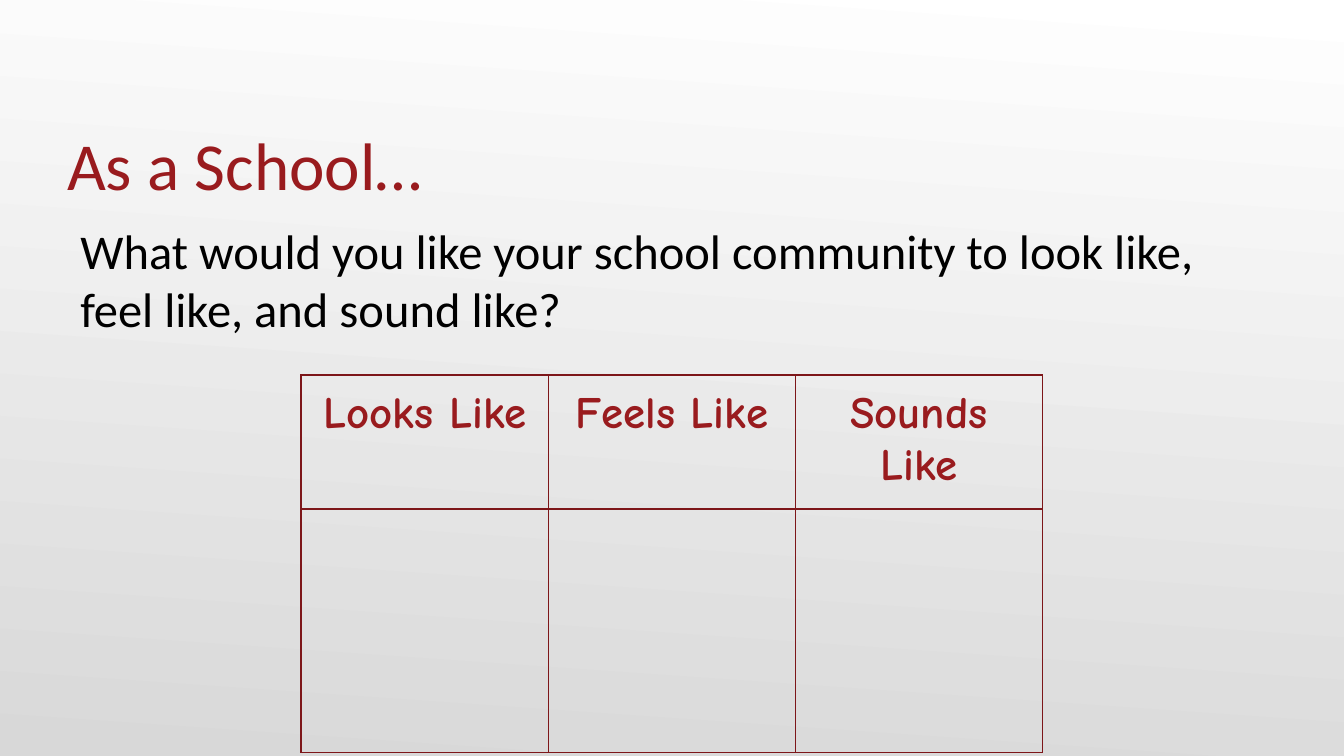
from lxml.etree import SubElement
from pptx import Presentation
from pptx.dml.color import RGBColor
from pptx.enum.text import MSO_ANCHOR, PP_ALIGN
from pptx.oxml.ns import qn
from pptx.util import Cm, Pt

# Content
COLORS = {"red": "991B1E", "border": "7D1619", "text": "000000",
          "top": "FFFFFF", "bottom": "D8D8D8"}
TEXTS = [
    {"text": "As a School…", "box": (1.27, 1.47, 22.86, 2.39),
     "insets": (0, 0.13, 0, 0), "anchor": MSO_ANCHOR.BOTTOM,
     "font": {"name": "Calibri", "size": Pt(36)}, "color": "red"},
    {"text": "What would you like your school community to look like, "
             "feel like, and sound like?",
     "box": (1.27, 4.04, 22.86, 9.14),
     "insets": (0.25, 0.13, 0.25, 0.13), "anchor": MSO_ANCHOR.TOP,
     "font": {"name": "Calibri", "size": Pt(26)}, "color": "text"},
]
HEADINGS = ["Looks Like", "Feels Like", "Sounds Like"]
HEADING_FONT = {"name": "Comic Neue", "size": Pt(24), "bold": True}
TABLE_LEFT, TABLE_TOP = 5.69, 7.09
COLUMN_WIDTH = 4.67
ROW_HEIGHTS = [1.68, 4.6]
CELL_MARGIN = 0.25
SIDES = ["left", "top", "right", "bottom"]


def rgb(name):
    return RGBColor.from_string(COLORS[name])


def set_font(font, values, color):
    for name, value in values.items():
        setattr(font, name, value)
    font.color.rgb = rgb(color)


def set_margins(target, margins):
    for side, margin in zip(SIDES, margins):
        setattr(target, f"margin_{side}", Cm(margin))


def set_borders(cell):
    properties = cell._tc.get_or_add_tcPr()
    for index, tag in enumerate(["a:lnL", "a:lnR", "a:lnT", "a:lnB"]):
        line = SubElement(properties, qn(tag), w=str(Pt(0.75)))
        fill = SubElement(line, qn("a:solidFill"))
        SubElement(fill, qn("a:srgbClr"), val=COLORS["border"])
        properties.insert(index, line)  # borders come before the fill


presentation = Presentation()
presentation.slide_width, presentation.slide_height = Cm(25.4), Cm(14.29)
slide = presentation.slides.add_slide(presentation.slide_layouts[6])

# Background gradient
background = slide.background.fill
background.gradient()
background.gradient_angle = 266
for stop, color, position in zip(background.gradient_stops, ["top", "bottom"], [0, 1]):
    stop.color.rgb = rgb(color)
    stop.position = position

# Title and question
for item in TEXTS:
    shape = slide.shapes.add_textbox(*map(Cm, item["box"]))
    frame = shape.text_frame
    frame.word_wrap = True
    frame.vertical_anchor = item["anchor"]
    set_margins(frame, item["insets"])
    paragraph = frame.paragraphs[0]
    paragraph.text = item["text"]
    set_font(paragraph.runs[0].font, item["font"], item["color"])

# Table
table = slide.shapes.add_table(
    len(ROW_HEIGHTS), len(HEADINGS), Cm(TABLE_LEFT), Cm(TABLE_TOP),
    Cm(COLUMN_WIDTH * len(HEADINGS)), Cm(sum(ROW_HEIGHTS))).table
table.first_row = table.horz_banding = False
for column in table.columns:
    column.width = Cm(COLUMN_WIDTH)
for row, height in zip(table.rows, ROW_HEIGHTS):
    row.height = Cm(height)
for cell in table.iter_cells():
    cell.fill.background()
    set_margins(cell, [CELL_MARGIN] * 4)
    set_borders(cell)
for cell, heading in zip(table.rows[0].cells, HEADINGS):
    paragraph = cell.text_frame.paragraphs[0]
    paragraph.text = heading
    paragraph.alignment = PP_ALIGN.CENTER
    set_font(paragraph.runs[0].font, HEADING_FONT, "red")

presentation.save("out.pptx")
